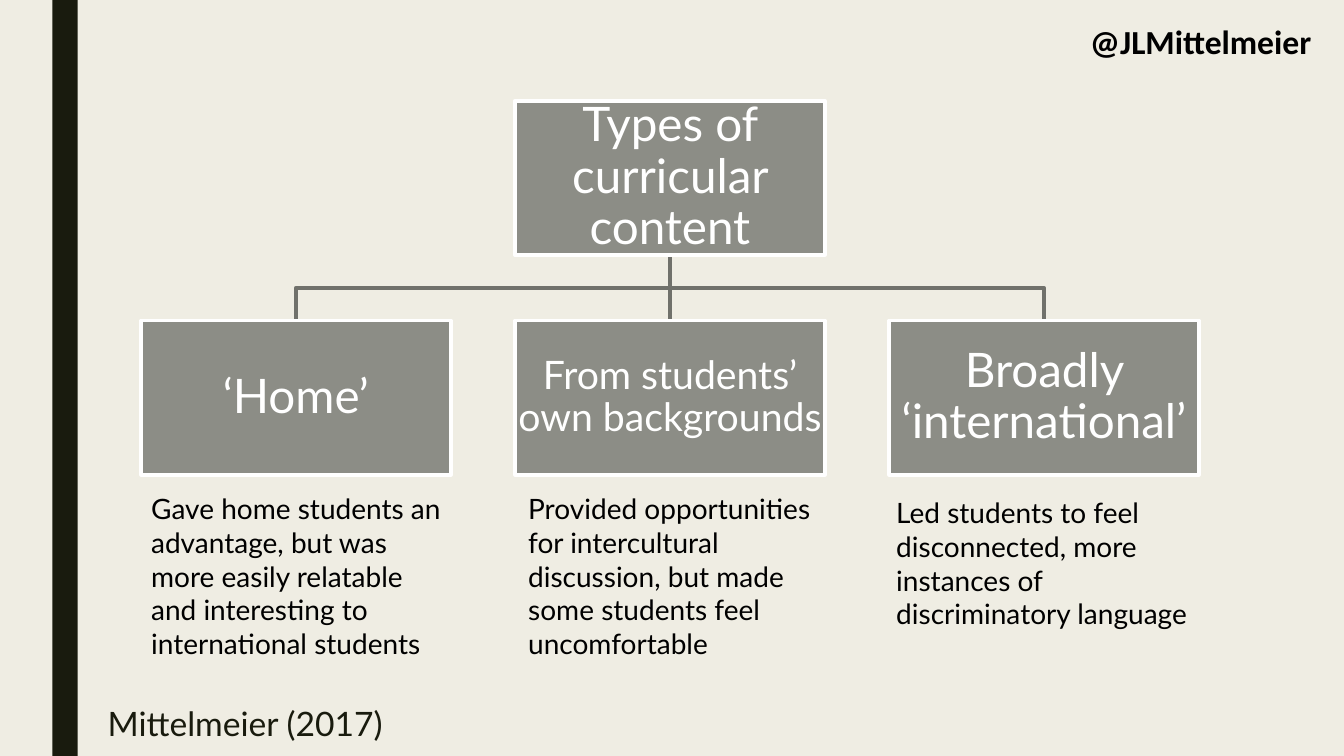
"""Build a slide with a tree of three types of curricular content."""
import pptx
import pptx.dml.color
import pptx.enum.shapes
import pptx.enum.text
import pptx.oxml.ns
import pptx.util
from lxml import etree

RGBColor = pptx.dml.color.RGBColor
Inches = pptx.util.Inches
Pt = pptx.util.Pt
PP_ALIGN = pptx.enum.text.PP_ALIGN
MSO_ANCHOR = pptx.enum.text.MSO_ANCHOR
RECTANGLE = pptx.enum.shapes.MSO_SHAPE.RECTANGLE
STRAIGHT = pptx.enum.shapes.MSO_CONNECTOR.STRAIGHT

CREAM = RGBColor(0xEF, 0xED, 0xE3)
DARK = RGBColor(0x19, 0x1B, 0x0E)
GREY = RGBColor(0x8C, 0x8D, 0x86)
BRANCH_GREY = RGBColor(0x70, 0x71, 0x6B)
WHITE = RGBColor(0xFF, 0xFF, 0xFF)
BLACK = RGBColor(0, 0, 0)

CITATION = "Mittelmeier (2017)"
HANDLE = "@JLMittelmeier"
ROOT = "Types of curricular content"
TYPES = [
    {"label": "‘Home’", "size": 34, "note_at": (1.4, 4.83),
     "note": "Gave home students an advantage, but was more easily relatable "
             "and interesting to international students"},
    {"label": "From students’ own backgrounds", "size": 28, "note_at": (5.14, 4.83),
     "note": "Provided opportunities for intercultural discussion, but made "
             "some students feel uncomfortable"},
    {"label": "Broadly ‘international’", "size": 34, "note_at": (8.79, 4.87),
     "note": "Led students to feel disconnected, more instances of "
             "discriminatory language"},
]

SLIDE_W, SLIDE_H = 13.33, 7.5
BOX_W, BOX_H = 3.07, 1.53
LEFT, COLUMN_STEP = 1.4, 3.71
ROOT_TOP, TYPE_TOP = 1.0, 3.18
NOTE_W, NOTE_H = 3.21, 1.78
LINE_WIDTH = Pt(2.75)


def write(shape, text, size, color, font="Lato", bold=False, spacing=None):
    frame = shape.text_frame
    frame.word_wrap = True
    frame.text = text
    para = frame.paragraphs[0]
    para.line_spacing = spacing
    span = para.runs[0]
    span.font.name = font
    span.font.size = Pt(size)
    span.font.bold = bold
    span.font.color.rgb = color
    return frame


def add_text(page, left, top, width, height, text, size, color, **style):
    box = page.shapes.add_textbox(*map(Inches, (left, top, width, height)))
    return write(box, text, size, color, **style)


def add_rectangle(page, left, top, width, height, fill):
    box = page.shapes.add_shape(RECTANGLE, *map(Inches, (left, top, width, height)))
    box.shadow.inherit = False
    box.fill.solid()
    box.fill.fore_color.rgb = fill
    box.line.fill.background()
    return box


def add_node(page, left, top, text, size):
    box = add_rectangle(page, left, top, BOX_W, BOX_H, GREY)
    box.line.color.rgb = WHITE
    box.line.width = LINE_WIDTH
    frame = write(box, text, size, WHITE, spacing=0.9)
    frame.vertical_anchor = MSO_ANCHOR.MIDDLE
    frame.margin_left = frame.margin_right = Inches(0.02)
    frame.margin_top = frame.margin_bottom = Inches(0.02)
    frame.paragraphs[0].alignment = PP_ALIGN.CENTER


def add_branch(page, start_x, end_x):
    start_y, end_y = ROOT_TOP + BOX_H, TYPE_TOP
    if start_x == end_x:
        branch = page.shapes.add_connector(
            STRAIGHT, *map(Inches, (start_x, start_y, end_x, end_y)))
    else:
        middle_y = (start_y + end_y) / 2
        corners = [(start_x, start_y), (start_x, middle_y),
                   (end_x, middle_y), (end_x, end_y)]
        start, *rest = [(Inches(x), Inches(y)) for x, y in corners]
        outline = page.shapes.build_freeform(*start)
        outline.add_line_segments(rest, close=False)
        branch = outline.convert_to_shape()
        branch.fill.background()
    branch.line.color.rgb = BRANCH_GREY
    branch.line.width = LINE_WIDTH
    etree.SubElement(branch.element.spPr, pptx.oxml.ns.qn("a:effectLst"))


def main():
    deck = pptx.Presentation()
    deck.slide_width, deck.slide_height = Inches(SLIDE_W), Inches(SLIDE_H)
    page = deck.slides.add_slide(deck.slide_layouts[6])
    page.background.fill.solid()
    page.background.fill.fore_color.rgb = CREAM

    add_rectangle(page, 0.52, 0, 0.25, SLIDE_H, DARK)
    add_text(page, 0.97, 6.97, 10.5, 0.53, CITATION, 24, DARK, spacing=0.89)

    lefts = [LEFT + COLUMN_STEP * column for column in range(len(TYPES))]
    root_left = lefts[1]
    for left in lefts:
        add_branch(page, root_left + BOX_W / 2, left + BOX_W / 2)
    add_node(page, root_left, ROOT_TOP, ROOT, 34)
    for left, kind in zip(lefts, TYPES):
        add_node(page, left, TYPE_TOP, kind["label"], kind["size"])
        add_text(page, *kind["note_at"], NOTE_W, NOTE_H, kind["note"], 20, BLACK)

    handle = add_text(page, 10.74, 0.17, 2.59, 0.48, HANDLE, 24, BLACK,
                      font="Calibri", bold=True)
    handle.margin_left = handle.margin_right = Inches(0.07)
    handle.margin_top = handle.margin_bottom = Inches(0.04)
    deck.save("out.pptx")


if __name__ == "__main__":
    main()
